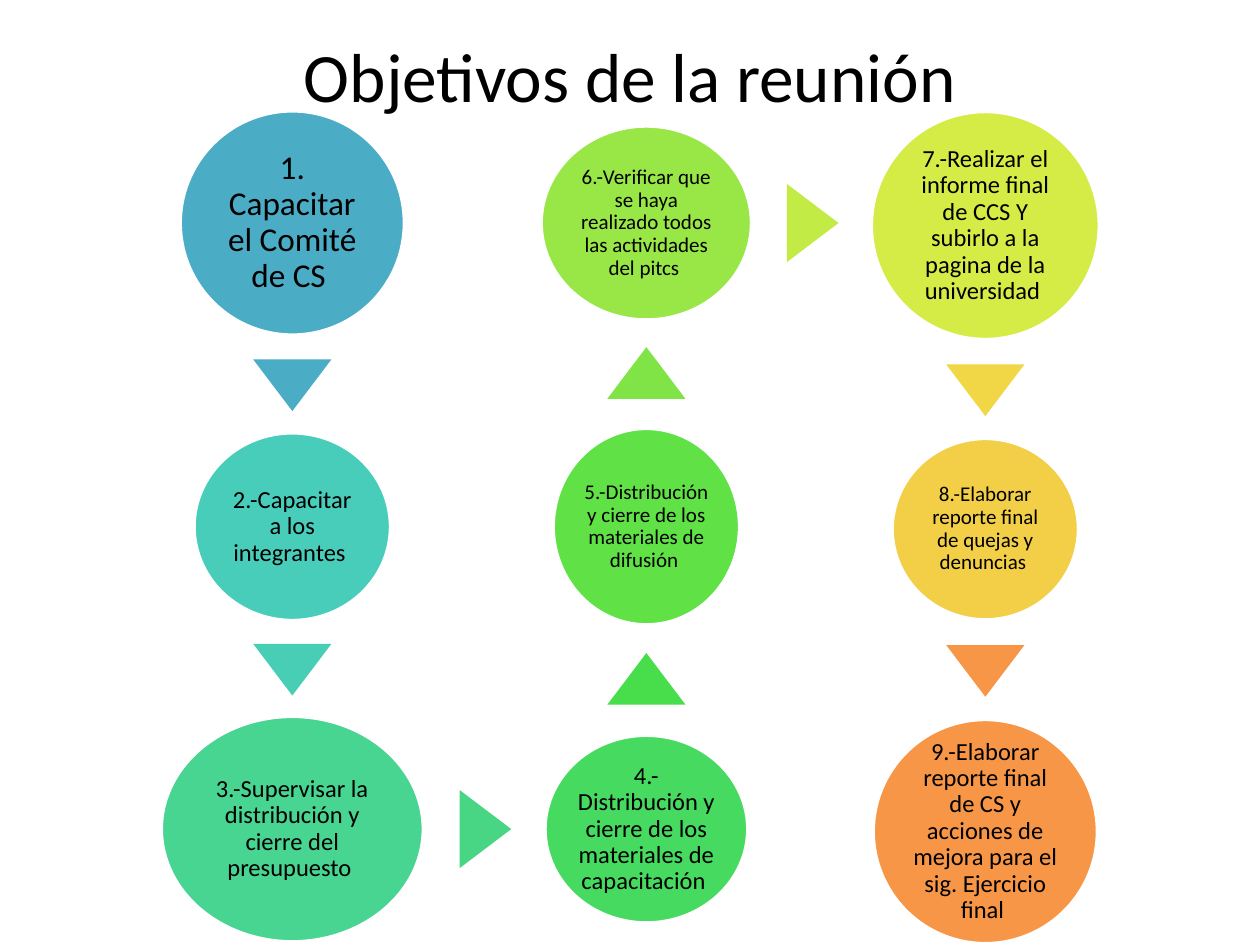
"""Build a slide with nine meeting goals in a snaking chain of circles."""
from dataclasses import dataclass

from pptx import Presentation
from pptx.dml.color import RGBColor
from pptx.enum import shapes, text
from pptx.util import Inches, Pt


@dataclass(frozen=True)
class Theme:
    font: str = "Calibri"
    ink: str = "000000"
    outline: str = "FFFFFF"
    outline_width: float = 2
    title: float = 39.6
    large: float = 19
    medium: float = 14
    small: float = 12
    circles: tuple = ("4BACC6", "49CDBB", "48D491", "47DA61", "60E146",
                      "98E746", "D5EC46", "F2CF46", "F79646")
    arrows: tuple = ("4BACC6", "49CEB6", "48D684", "47DD4B", "80E446",
                     "C3EB46", "F1D746", "F79646")


theme = Theme()
CELL = Inches(0.1)
GRID_WIDTH, GRID_HEIGHT = 100, 75
COLUMNS = (23.2, 51.3, 78.2)
ROWS = (17.7, 41.8, 65.8)
COLUMN_DROP = (0, 0, 0.2)
ARROW_WIDTH, ARROW_HEIGHT = 6.2, 4.1
ARROW_LEAD = 0.1


def box(center_x, center_y, width, height):
    corner = (center_x - width / 2, center_y - height / 2, width, height)
    return [round(length * CELL) for length in corner]


def write(shape, words, size, inset_x, inset_y, line_spacing):
    frame = shape.text_frame
    frame.word_wrap = True
    frame.vertical_anchor = text.MSO_ANCHOR.MIDDLE
    frame.margin_left = frame.margin_right = Inches(inset_x)
    frame.margin_top = frame.margin_bottom = Inches(inset_y)
    paragraph = frame.paragraphs[0]
    paragraph.alignment = text.PP_ALIGN.CENTER
    paragraph.line_spacing = line_spacing
    run = paragraph.add_run()
    run.text = words
    run.font.name = theme.font
    run.font.size = Pt(size)
    run.font.color.rgb = RGBColor.from_string(theme.ink)


presentation = Presentation()
presentation.slide_width = GRID_WIDTH * CELL
presentation.slide_height = GRID_HEIGHT * CELL
slide = presentation.slides.add_slide(presentation.slide_layouts[6])

title = slide.shapes.add_textbox(*box(GRID_WIDTH / 2, 5.9, 90, 5.8))
write(title, "Objetivos de la reunión", theme.title, 0.1, 0.05, 1)

# column, row, width, height, type size, wording
goals = (
    (0, 0, 17.8, 17.8, theme.large, "1. Capacitar el Comité de CS "),
    (0, 1, 15.6, 14.9, theme.medium, "2.-Capacitar a los integrantes "),
    (0, 2, 20.8, 17.9, theme.medium,
     "3.-Supervisar la distribución y cierre del presupuesto "),
    (1, 2, 16.1, 14.9, theme.medium,
     "4.-Distribución y cierre de los materiales de capacitación "),
    (1, 1, 14.8, 15.6, theme.small,
     "5.-Distribución y cierre de los materiales de difusión "),
    (1, 0, 16.7, 15.4, theme.small,
     "6.-Verificar que se haya realizado todos las actividades del pitcs "),
    (2, 0, 18.1, 18.1, theme.medium,
     "7.-Realizar el informe final de CCS Y subirlo a la pagina de la universidad "),
    (2, 1, 14.8, 14.4, theme.small,
     "8.-Elaborar reporte final de quejas y denuncias "),
    (2, 2, 17.8, 17.8, theme.medium,
     "9.-Elaborar reporte final de CS y acciones de mejora para el sig. Ejercicio final "),
)

circles = []
for (column, row, width, height, size, words), color in zip(goals, theme.circles):
    center_x, center_y = COLUMNS[column], ROWS[row] + COLUMN_DROP[column]
    circle = slide.shapes.add_shape(
        shapes.MSO_SHAPE.OVAL, *box(center_x, center_y, width, height))
    circle.shadow.inherit = False
    circle.fill.solid()
    circle.fill.fore_color.rgb = RGBColor.from_string(color)
    circle.line.color.rgb = RGBColor.from_string(theme.outline)
    circle.line.width = Pt(theme.outline_width)
    write(circle, words, size, 0.02, 0.02, 0.9)
    circles.append((column, center_x, center_y, width, height))

for start, end, color in zip(circles, circles[1:], theme.arrows):
    column, start_x, start_y, start_width, start_height = start
    next_column, end_x, end_y, end_width, end_height = end
    if column != next_column:
        rotation = 90
        center_x = (start_x + start_width / 2 + end_x - end_width / 2) / 2 + ARROW_LEAD
        center_y = start_y
    else:
        heading = 1 if end_y > start_y else -1
        rotation = 180 if heading == 1 else 0
        center_x = start_x
        center_y = (start_y + end_y) / 2 + heading * (
            (start_height - end_height) / 4 + ARROW_LEAD)
    arrow = slide.shapes.add_shape(
        shapes.MSO_SHAPE.ISOSCELES_TRIANGLE,
        *box(center_x, center_y, ARROW_WIDTH, ARROW_HEIGHT))
    arrow.rotation = rotation
    arrow.shadow.inherit = False
    arrow.fill.solid()
    arrow.fill.fore_color.rgb = RGBColor.from_string(color)
    arrow.line.fill.background()

presentation.save("out.pptx")
